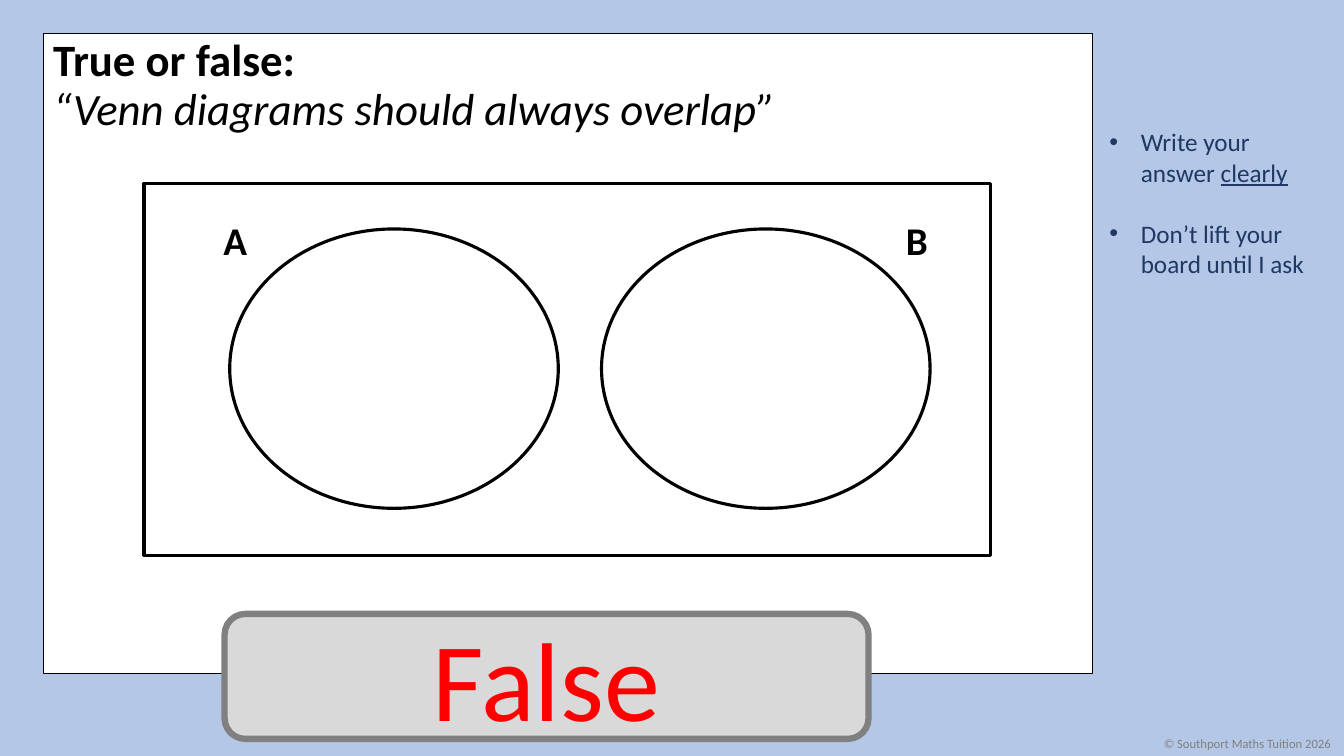
import pptx
import pptx.dml.color
import pptx.enum.shapes
import pptx.enum.text
import pptx.oxml.ns
import pptx.util
from lxml import etree

Cm, Pt = pptx.util.Cm, pptx.util.Pt
SHAPE = pptx.enum.shapes.MSO_SHAPE
ALIGN = pptx.enum.text.PP_ALIGN
ANCHOR = pptx.enum.text.MSO_ANCHOR

COLOURS = {
    "background": "B4C7E7",
    "white": "FFFFFF",
    "black": "000000",
    "navy": "203864",
    "grey": "808080",
    "button": "D9D9D9",
    "red": "FF0000",
}
PANEL = (1.09, 0.84, 26.44, 16.13)


def colour(name):
    return pptx.dml.color.RGBColor.from_string(COLOURS[name])


def style_span(span, size, tint, bold=False, italic=False, underline=False):
    font = span.font
    font.name, font.size = "Calibri", Pt(size)
    font.color.rgb = colour(tint)
    font.bold, font.italic, font.underline = bold, italic, underline


def add_outline(page, kind, place, width, line="black", fill=None):
    shape = page.shapes.add_shape(kind, *map(Cm, place))
    shape.shadow.inherit = False
    if fill:
        shape.fill.solid()
        shape.fill.fore_color.rgb = colour(fill)
    else:
        shape.fill.background()
    shape.line.color.rgb = colour(line)
    shape.line.width = Pt(width)
    return shape


def add_box(page, place, text, wrap=True):
    box = page.shapes.add_textbox(*map(Cm, place))
    box.text_frame.word_wrap = wrap
    box.text_frame.text = text
    return box.text_frame.paragraphs


def add_label(page, place, text, size, tint, bold=False, align=ALIGN.LEFT):
    para = add_box(page, place, text, wrap=False)[0]
    para.alignment = align
    style_span(para.runs[0], size, tint, bold)


def add_bullet(para):
    properties = para._p.get_or_add_pPr()
    properties.set("marL", str(Cm(0.79)))
    properties.set("indent", str(-Cm(0.79)))
    for tag, key, value in (("a:buFont", "typeface", "Arial"), ("a:buChar", "char", "•")):
        etree.SubElement(properties, pptx.oxml.ns.qn(tag)).set(key, value)


def add_reminders(page):
    paras = add_box(page, (27.71, 3.07, 5.89, 4.11),
                    "Write your answer \nDon’t lift your board until I ask")
    for para in paras:
        add_bullet(para)
        style_span(para.runs[0], 18, "navy")
    paras[1].space_before = Pt(22)
    span = paras[0].add_run()
    span.text = "clearly"
    style_span(span, 18, "navy", underline=True)


def add_question(page):
    paras = add_box(page, PANEL, "True or false:\n“Venn diagrams should always overlap”")
    for para, bold in zip(paras, (True, False)):
        para.line_spacing = 0.9
        style_span(para.runs[0], 32, "black", bold=bold, italic=not bold)


def add_venn(page):
    for left in (5.79, 15.16):
        add_outline(page, SHAPE.OVAL, (left, 5.77, 8.28, 7.04), 2.25)
    add_outline(page, SHAPE.RECTANGLE, (3.63, 4.62, 21.34, 9.37), 2.25)
    for name, left in (("A", 5.38), ("B", 22.53)):
        add_label(page, (left, 5.33, 1.1, 1.45), name, 28, "black", True, ALIGN.RIGHT)


def add_answer(page):
    button = add_outline(page, SHAPE.ROUNDED_RECTANGLE, (5.66, 15.47, 16.23, 3.15),
                         4.5, "grey", "button")
    frame = button.text_frame
    frame.text = "False"
    frame.vertical_anchor = ANCHOR.MIDDLE
    para = frame.paragraphs[0]
    para.alignment = ALIGN.CENTER
    style_span(para.runs[0], 80, "red")


def main():
    deck = pptx.Presentation()
    deck.slide_width, deck.slide_height = Cm(33.87), Cm(19.05)
    page = deck.slides.add_slide(deck.slide_layouts[6])
    page.background.fill.solid()
    page.background.fill.fore_color.rgb = colour("background")

    # Board, reminders and copyright line
    add_outline(page, SHAPE.RECTANGLE, PANEL, 1, fill="white")
    add_reminders(page)
    add_label(page, (29.08, 18.42, 4.78, 0.64), "© Southport Maths Tuition 2026", 9, "grey")

    # Question, diagram and answer
    add_question(page)
    add_venn(page)
    add_answer(page)

    deck.save("out.pptx")


if __name__ == "__main__":
    main()
